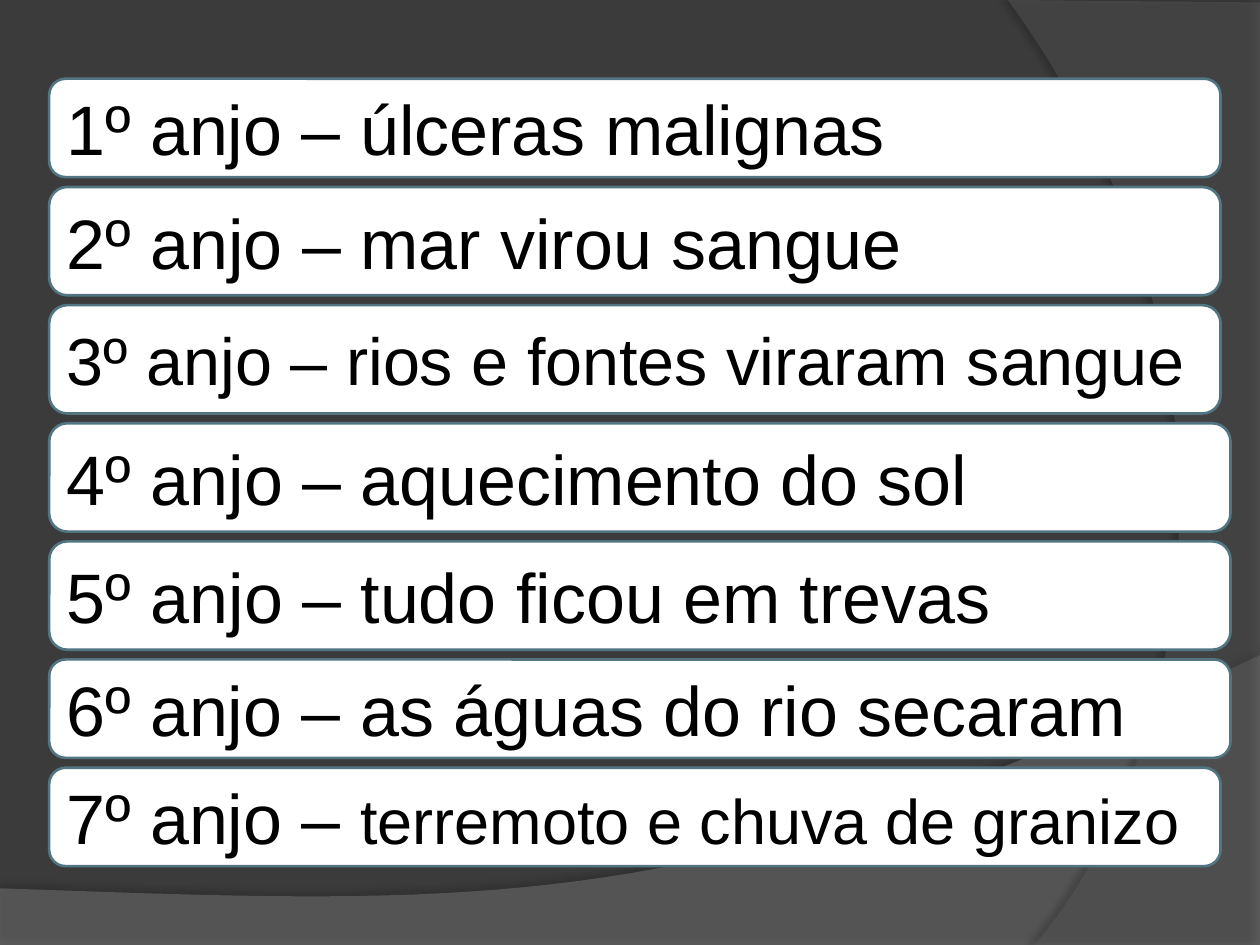
"""Build the slide that lists the seven angels and their plagues."""
from dataclasses import dataclass
from lxml.etree import SubElement as Sub
from pptx import Presentation
from pptx.dml.color import RGBColor as Rgb
from pptx.enum.shapes import MSO_SHAPE as Kind
from pptx.enum.text import MSO_ANCHOR as Anchor, PP_ALIGN as Align
from pptx.oxml.ns import qn
from pptx.util import Inches, Pt

WIDE, HIGH = 10, 7.5
UNIT = WIDE / 128
LEFT, TOP, GAP = 5, 8, 1
STEPS = 40


@dataclass(frozen=True)
class Theme:
    back: str = "3B3B3B"
    wave: str = "7F7F7F"
    arc: str = "5E5E5E"
    card: str = "FFFFFF"
    edge: str = "517682"
    ink: str = "000000"
    font: str = "Arial"
    big: int = 40
    mid: int = 38
    small: int = 36


THEME = Theme()


@dataclass(frozen=True)
class Card:
    plague: str
    cols: int
    rows: int
    lead: int = THEME.big
    size: int = THEME.big


@dataclass(frozen=True)
class Band:
    color: str
    alpha: int
    shade: int
    blur: float
    dist: float
    angle: int
    start: tuple
    curve: tuple
    rest: tuple


CARDS = (
    Card("úlceras malignas", 119, 10),
    Card("mar virou sangue", 119, 11),
    Card("rios e fontes viraram sangue", 119, 11, THEME.mid, THEME.mid),
    Card("aquecimento do sol", 120, 11),
    Card("tudo ficou em trevas", 120, 11),
    Card("as águas do rio secaram", 120, 10),
    Card("terremoto e chuva de granizo", 119, 10, size=THEME.small),
)

BANDS = (
    Band(THEME.wave, 45, 35, 4, 3.5, 270, (WIDE, 5.2),
         ((5.59, 7.29), (3.91, 7.19), (0, 7.05)), ((0, HIGH), (WIDE, HIGH))),
    Band(THEME.arc, 40, 45, 4, 4, 180, (8.21, HIGH),
         ((9.35, 6.19), (10.18, 3), (8, 0)), ((WIDE, 0.02), (WIDE, HIGH))),
)


def bend(start: tuple, curve: tuple) -> list:
    """Return points along a cubic curve."""
    knots = (start, *curve)
    dots = []
    for step in range(1, STEPS + 1):
        t = step / STEPS
        parts = ((1 - t) ** 3, 3 * t * (1 - t) ** 2, 3 * t * t * (1 - t), t ** 3)
        dots.append(tuple(sum(w * k[i] for w, k in zip(parts, knots)) for i in (0, 1)))
    return dots


def fade(color, share: int) -> None:
    """Set the opacity of a colour element in percent."""
    Sub(color, qn("a:alpha"), val=str(share * 1000))


def draw_band(slide, band: Band) -> None:
    """Draw one translucent curved band with its shadow."""
    pen = slide.shapes.build_freeform(*map(Inches, band.start))
    dots = [*bend(band.start, band.curve), *band.rest]
    pen.add_line_segments([(Inches(x), Inches(y)) for x, y in dots], close=True)
    shape = pen.convert_to_shape()
    shape.fill.solid()
    shape.fill.fore_color.rgb = Rgb.from_string(band.color)
    shape.line.fill.background()
    shape.shadow.inherit = False
    props = shape.element.spPr
    fade(props.find(qn("a:solidFill")).find(qn("a:srgbClr")), band.alpha)
    glow = Sub(props.find(qn("a:effectLst")), qn("a:outerShdw"),
               blurRad=str(Pt(band.blur)), dist=str(Pt(band.dist)),
               dir=str(band.angle * 60000), rotWithShape="0")
    fade(Sub(glow, qn("a:srgbClr"), val=THEME.ink), band.shade)


def draw_card(slide, card: Card, rank: int, row: int) -> None:
    """Draw one rounded card at the given grid row."""
    box = (Inches(n * UNIT) for n in (LEFT, row, card.cols, card.rows))
    shape = slide.shapes.add_shape(Kind.ROUNDED_RECTANGLE, *box)
    shape.shadow.inherit = False
    shape.fill.solid()
    shape.fill.fore_color.rgb = Rgb.from_string(THEME.card)
    shape.line.color.rgb = Rgb.from_string(THEME.edge)
    shape.line.width = Pt(1.5)
    frame = shape.text_frame
    frame.word_wrap = True
    frame.vertical_anchor = Anchor.MIDDLE
    para = frame.paragraphs[0]
    para.alignment = Align.LEFT
    head = f"{rank}º anjo – "
    if card.lead == card.size:
        para.text = head + card.plague
    else:
        para.text = head
        para.add_run().text = card.plague
    for run, size in zip(para.runs, (card.lead, card.size)):
        run.font.name = THEME.font
        run.font.size = Pt(size)
        run.font.color.rgb = Rgb.from_string(THEME.ink)


def main() -> None:
    """Build and save the slide."""
    deck = Presentation()
    deck.slide_width, deck.slide_height = Inches(WIDE), Inches(HIGH)
    slide = deck.slides.add_slide(deck.slide_layouts[6])
    fill = slide.background.fill
    fill.solid()
    fill.fore_color.rgb = Rgb.from_string(THEME.back)
    for band in BANDS:
        draw_band(slide, band)
    row = TOP
    for rank, card in enumerate(CARDS, 1):
        draw_card(slide, card, rank, row)
        row += card.rows + GAP
    deck.save("out.pptx")


if __name__ == "__main__":
    main()
